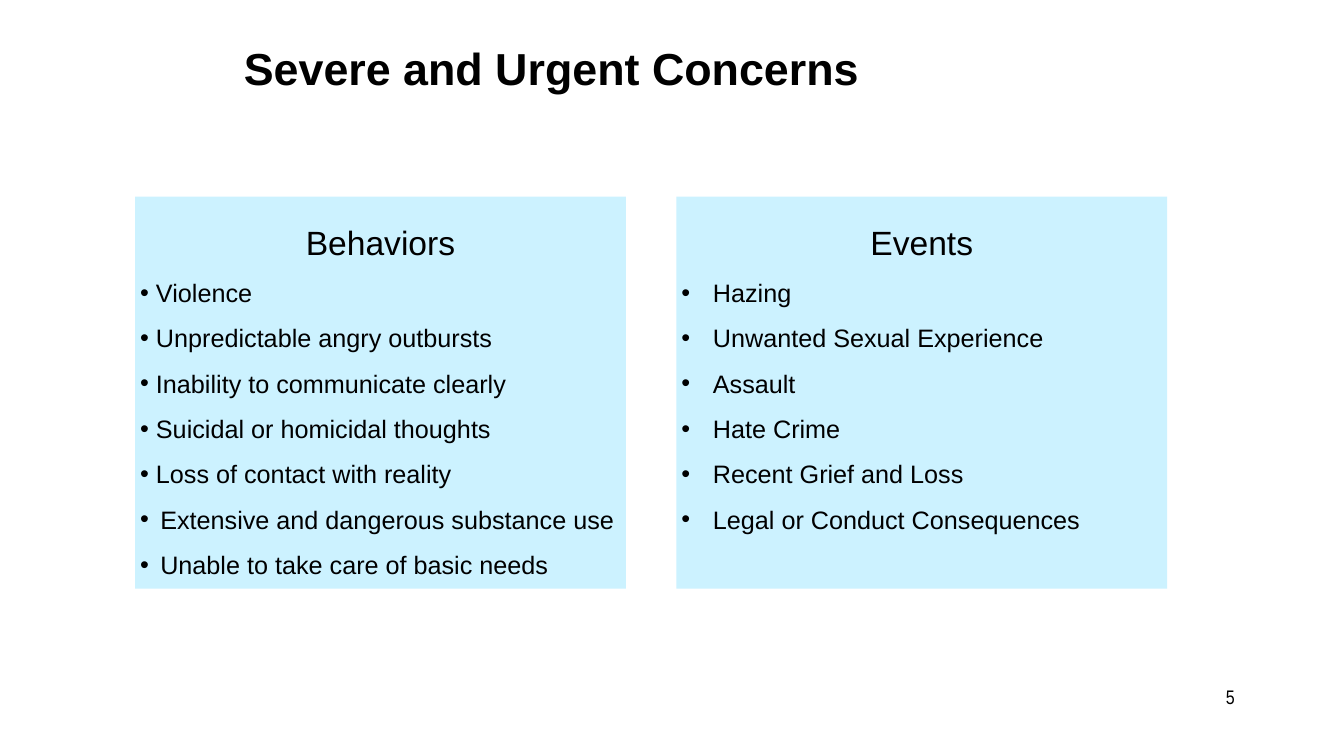
from dataclasses import dataclass

from lxml.etree import SubElement
from pptx import Presentation
from pptx.dml.color import RGBColor
from pptx.enum.text import MSO_ANCHOR as Anchor, MSO_AUTO_SIZE as AutoSize, PP_ALIGN as Align
from pptx.oxml.ns import qn
from pptx.util import Pt


@dataclass(frozen=True)
class Theme:
    text: RGBColor = RGBColor(0x00, 0x00, 0x00)
    panel: RGBColor = RGBColor(0xCC, 0xF2, 0xFF)
    font: str = "Arial"
    number_font: str = "Arial Narrow"
    title_size: float = 32
    heading_size: float = 24
    item_size: float = 18
    number_size: float = 14
    inset: float = 3.6
    line_spacing: float = 1.5


@dataclass(frozen=True)
class Box:
    left: float
    top: float
    width: float
    height: float


@dataclass(frozen=True)
class Item:
    text: str
    indent: float


@dataclass(frozen=True)
class Panel:
    heading: str
    items: tuple[Item, ...]


THEME = Theme()
TITLE_BOX = Box(170.6, 25.2, 625, 46)
NUMBER_BOX = Box(868.3, 486, 20.9, 23)
FIRST_PANEL_BOX = Box(96.5, 140.4, 350.6, 280)
PANEL_STEP = 386.6
TIGHT_INDENT = 11.3
MEDIUM_INDENT = 14.4
WIDE_INDENT = 22.5

BEHAVIORS = Panel("Behaviors", (
    Item("Violence", TIGHT_INDENT),
    Item("Unpredictable angry outbursts", TIGHT_INDENT),
    Item("Inability to communicate clearly", TIGHT_INDENT),
    Item("Suicidal or homicidal thoughts", TIGHT_INDENT),
    Item("Loss of contact with reality", TIGHT_INDENT),
    Item("Extensive and dangerous substance use", MEDIUM_INDENT),
    Item("Unable to take care of basic needs", MEDIUM_INDENT),
))
EVENTS = Panel("Events", tuple(Item(text, WIDE_INDENT) for text in (
    "Hazing",
    "Unwanted Sexual Experience",
    "Assault",
    "Hate Crime",
    "Recent Grief and Loss",
    "Legal or Conduct Consequences",
)))


def place(shape, box: Box) -> None:
    shape.left, shape.top = Pt(box.left), Pt(box.top)
    shape.width, shape.height = Pt(box.width), Pt(box.height)


def prepare_frame(text_frame, inset: float) -> None:
    text_frame.word_wrap = True
    text_frame.auto_size = AutoSize.NONE
    text_frame.vertical_anchor = Anchor.TOP
    text_frame.margin_left = text_frame.margin_right = Pt(inset)
    text_frame.margin_top = text_frame.margin_bottom = Pt(inset)


def format_runs(paragraph, size: float, font: str = THEME.font, bold: bool = False) -> None:
    for run in paragraph.runs:
        run.font.name = font
        run.font.size = Pt(size)
        run.font.bold = bold
        run.font.color.rgb = THEME.text


def set_bullet(paragraph, indent: float) -> None:
    properties = paragraph._p.get_or_add_pPr()
    properties.set("marL", str(Pt(indent)))
    properties.set("indent", str(-Pt(indent)))
    if indent:
        SubElement(properties, qn("a:buFont"), typeface=THEME.font)
        SubElement(properties, qn("a:buChar"), char="•")
    else:
        SubElement(properties, qn("a:buNone"))


def fill_title(shape, text: str) -> None:
    place(shape, TITLE_BOX)
    text_frame = shape.text_frame
    prepare_frame(text_frame, THEME.inset)
    text_frame.text = text
    paragraph = text_frame.paragraphs[0]
    paragraph.alignment = Align.LEFT
    format_runs(paragraph, THEME.title_size, bold=True)


def fill_panel(shape, panel: Panel, box: Box) -> None:
    place(shape, box)
    shape.fill.solid()
    shape.fill.fore_color.rgb = THEME.panel
    text_frame = shape.text_frame
    prepare_frame(text_frame, THEME.inset)
    text_frame.text = "\n".join([panel.heading, *(item.text for item in panel.items)])
    indents = [0, *(item.indent for item in panel.items)]
    for paragraph, indent in zip(text_frame.paragraphs, indents):
        paragraph.alignment = Align.LEFT if indent else Align.CENTER
        paragraph.line_spacing = THEME.line_spacing
        paragraph.space_before = Pt(0)
        set_bullet(paragraph, indent)
        format_runs(paragraph, THEME.item_size if indent else THEME.heading_size)


def add_slide_number(slide, number: str) -> None:
    shape = slide.shapes.add_textbox(0, 0, 0, 0)
    place(shape, NUMBER_BOX)
    text_frame = shape.text_frame
    prepare_frame(text_frame, THEME.inset)
    text_frame.margin_left = text_frame.margin_right = Pt(7.2)
    text_frame.text = number
    paragraph = text_frame.paragraphs[0]
    paragraph.alignment = Align.RIGHT
    format_runs(paragraph, THEME.number_size, THEME.number_font)


def main() -> None:
    presentation = Presentation()
    presentation.slide_width, presentation.slide_height = Pt(960), Pt(540)
    slide = presentation.slides.add_slide(presentation.slide_layouts.get_by_name("Two Content"))
    title, *bodies = slide.placeholders
    fill_title(title, "Severe and Urgent Concerns")
    add_slide_number(slide, "5")
    first = FIRST_PANEL_BOX
    for index, (body, panel) in enumerate(zip(bodies, (BEHAVIORS, EVENTS))):
        box = Box(first.left + index * PANEL_STEP, first.top, first.width, first.height)
        fill_panel(body, panel, box)
    presentation.save("out.pptx")


if __name__ == "__main__":
    main()
